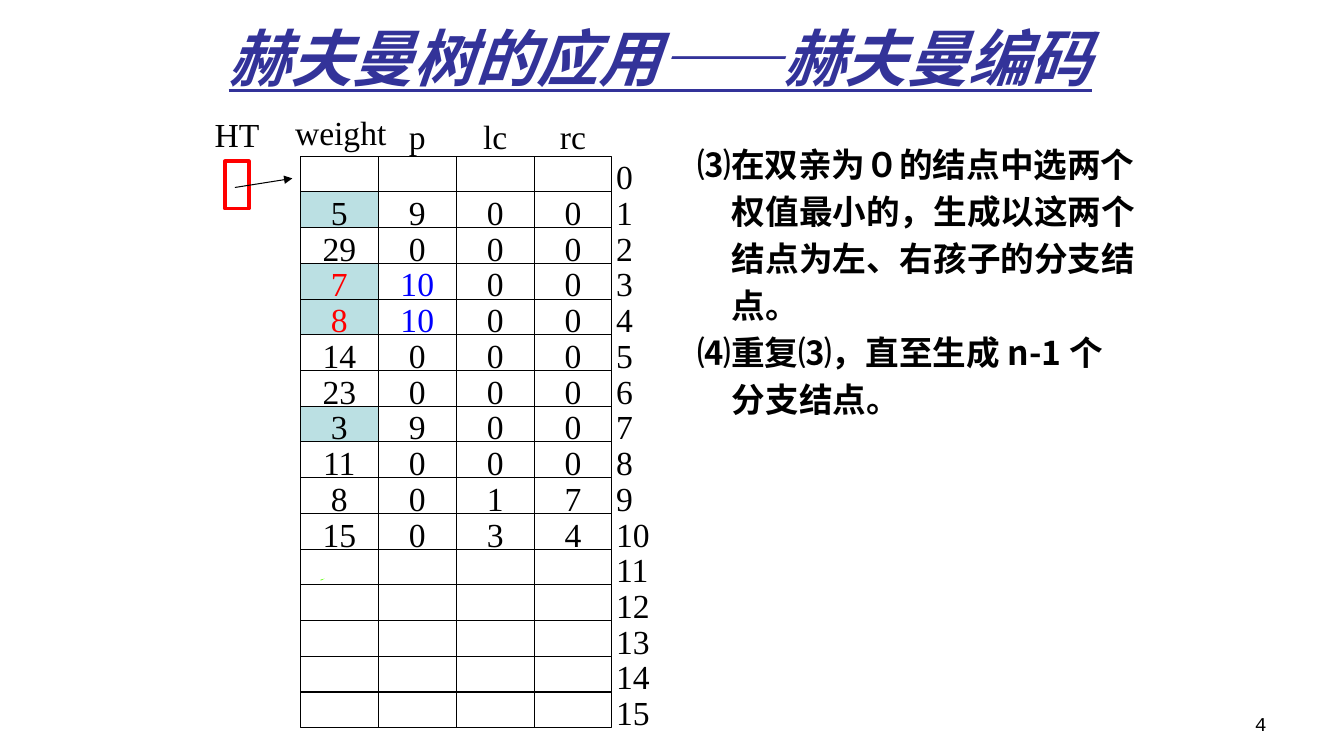
from dataclasses import dataclass

from lxml import etree
from pptx import Presentation
from pptx.dml.color import RGBColor
from pptx.enum.shapes import MSO_CONNECTOR, MSO_SHAPE
from pptx.enum.text import MSO_ANCHOR, PP_ALIGN
from pptx.oxml.ns import qn
from pptx.util import Inches, Pt

LEFT, MID, RIGHT = PP_ALIGN.LEFT, PP_ALIGN.CENTER, PP_ALIGN.RIGHT
TOP, CORE = MSO_ANCHOR.TOP, MSO_ANCHOR.MIDDLE
RECT, LINE = MSO_SHAPE.RECTANGLE, MSO_CONNECTOR.STRAIGHT


@dataclass(frozen=True)
class Theme:
    ink: str = "000000"
    title: str = "333399"
    red: str = "FF0000"
    blue: str = "0000FF"
    tint: str = "BBE0E3"
    lime: str = "59FF00"
    serif: str = "Times New Roman"
    mono: str = "Courier New"
    hans: str = "Noto Sans CJK SC"
    head: int = 44
    body: int = 24
    note: int = 14
    thin: float = 0.75
    bold: float = 2.5


THEME = Theme()
HEADS = ["weight", "p", "lc", "rc"]
SLOTS = 16
NODES = {
    1: (5, 9, 0, 0), 2: (29, 0, 0, 0), 3: (7, 10, 0, 0), 4: (8, 10, 0, 0),
    5: (14, 0, 0, 0), 6: (23, 0, 0, 0), 7: (3, 9, 0, 0), 8: (11, 0, 0, 0),
    9: (8, 0, 1, 7), 10: (15, 0, 3, 4),
}
USED = {1, 3, 4, 7}
PICKED = {3, 4}
STEPS = [
    "⑶在双亲为０的结点中选两个\v权值最小的，生成以这两个\v结点为左、右孩子的分支结\v点。",
    "⑷重复⑶，直至生成 n-1 个\v分支结点。",
]


def rgb(code):
    return RGBColor.from_string(code)


def write(shape, text, size=THEME.body, font=THEME.serif, color=THEME.ink,
          align=LEFT, anchor=TOP, pad=(0.1, 0.05, 0.1, 0.05), wrap=True,
          bold=False, italic=False, under=False, pitch=None, hang=0):
    """Fill a shape with one paragraph for each line of text."""
    frame = shape.text_frame
    frame.word_wrap, frame.vertical_anchor = wrap, anchor
    (frame.margin_left, frame.margin_top,
     frame.margin_right, frame.margin_bottom) = map(Inches, pad)
    for num, line in enumerate(text.split("\n")):
        para = frame.add_paragraph() if num else frame.paragraphs[0]
        para.text, para.alignment = line, align
        if pitch:
            para.line_spacing = Pt(pitch)
        if hang:
            props = para._p.get_or_add_pPr()
            props.set("marL", str(Inches(hang)))
            props.set("indent", str(-Inches(hang)))
        for run in para.runs:
            face = run.font
            face.size, face.name, face.color.rgb = Pt(size), font, rgb(color)
            face.bold, face.italic, face.underline = bold, italic, under
            asian = etree.SubElement(run._r.get_or_add_rPr(), qn("a:ea"))
            asian.set("typeface", THEME.hans)


def label(slide, box, text, **form):
    write(slide.shapes.add_textbox(*map(Inches, box)), text, **form)


def block(slide, box, fill=None, line=THEME.ink, width=THEME.thin):
    shape = slide.shapes.add_shape(RECT, *map(Inches, box))
    shape.shadow.inherit = False
    if fill:
        shape.fill.solid()
        shape.fill.fore_color.rgb = rgb(fill)
    else:
        shape.fill.background()
    shape.line.color.rgb, shape.line.width = rgb(line), Pt(width)
    return shape


def grid(slide, box):
    """Node table: column heads, cells and slot numbers."""
    left, top, width, height = box
    wide, high = width / len(HEADS), height / SLOTS
    pad = (0.08, 0, 0.08, 0)

    # Column heads; the first is wider than its column
    label(slide, (left - 0.28, top - 0.44, 1.36, 0.44), HEADS[0],
          align=MID, pad=pad)
    for col, name in enumerate(HEADS[1:], 1):
        label(slide, (left + col * wide, top - 0.4, wide, 0.4), name,
              align=MID, pad=pad)

    # Cells and slot numbers
    for row in range(SLOTS):
        y = top + row * high
        vals = NODES.get(row, [""] * len(HEADS))
        for col, val in enumerate(vals):
            fill = THEME.tint if col == 0 and row in USED else None
            cell = block(slide, (left + col * wide, y, wide, high), fill)
            if val != "":
                hue = (THEME.red, THEME.blue, THEME.ink, THEME.ink)[col]
                write(cell, str(val), align=MID, pad=pad,
                      color=hue if row in PICKED else THEME.ink)
        label(slide, (left + width, y, 0.47, high), str(row),
              pad=(0.04, 0, 0.04, 0))


def root(slide, box):
    """HT pointer: name, red box and arrow to the table."""
    left, top, width, height = box
    label(slide, (left, top, width, 0.47), "HT", anchor=CORE, wrap=False,
          pad=(0.1, 0, 0, 0.05))
    block(slide, (left + 0.2, top + 0.48, 0.24, height - 0.48),
          line=THEME.red, width=THEME.bold)
    ends = (left + 0.3, top + 0.74, left + 0.87, top + 0.65)
    arrow = slide.shapes.add_connector(LINE, *map(Inches, ends))
    arrow.line.color.rgb, arrow.line.width = rgb(THEME.ink), Pt(THEME.thin)
    tip = etree.SubElement(arrow.line._get_or_add_ln(), qn("a:tailEnd"))
    tip.set("type", "triangle")
    etree.SubElement(arrow._element.spPr, qn("a:effectLst"))


def speck(slide, box):
    """Small green mark inside the table."""
    left, top, width, height = box
    right, low = left + width, top + height
    pen = slide.shapes.build_freeform(Inches(right), Inches(top))
    pen.add_line_segments([(Inches(left), Inches(low)),
                           (Inches(left), Inches(low - height / 2))])
    mark = pen.convert_to_shape()
    mark.shadow.inherit = False
    mark.fill.solid()
    mark.fill.fore_color.rgb = rgb(THEME.lime)
    mark.line.fill.background()


def main():
    deck = Presentation()
    deck.slide_width, deck.slide_height = Inches(13.33), Inches(7.5)
    slide = deck.slides.add_slide(deck.slide_layouts[6])

    # Title and page number
    label(slide, (2.17, 0.13, 9, 0.87), "赫夫曼树的应用——赫夫曼编码",
          size=THEME.head, font=THEME.mono, color=THEME.title, anchor=CORE,
          bold=True, italic=True, under=True)
    label(slide, (11.81, 7.01, 0.85, 0.36), "4", size=THEME.note,
          font=THEME.mono, align=RIGHT)

    # Node table with its pointer
    speck(slide, (3.18, 5.74, 0.04, 0.02))
    grid(slide, (2.98, 1.55, 3.09, 5.67))
    root(slide, (2.03, 1.12, 0.59, 0.95))

    # Steps of the method
    label(slide, (6.82, 1.36, 4.57, 2.95), "\n".join(STEPS),
          font=THEME.hans, bold=True, pitch=33.6, hang=0.34,
          pad=(0.1, 0, 0.1, 0.08))
    deck.save("out.pptx")


if __name__ == "__main__":
    main()
